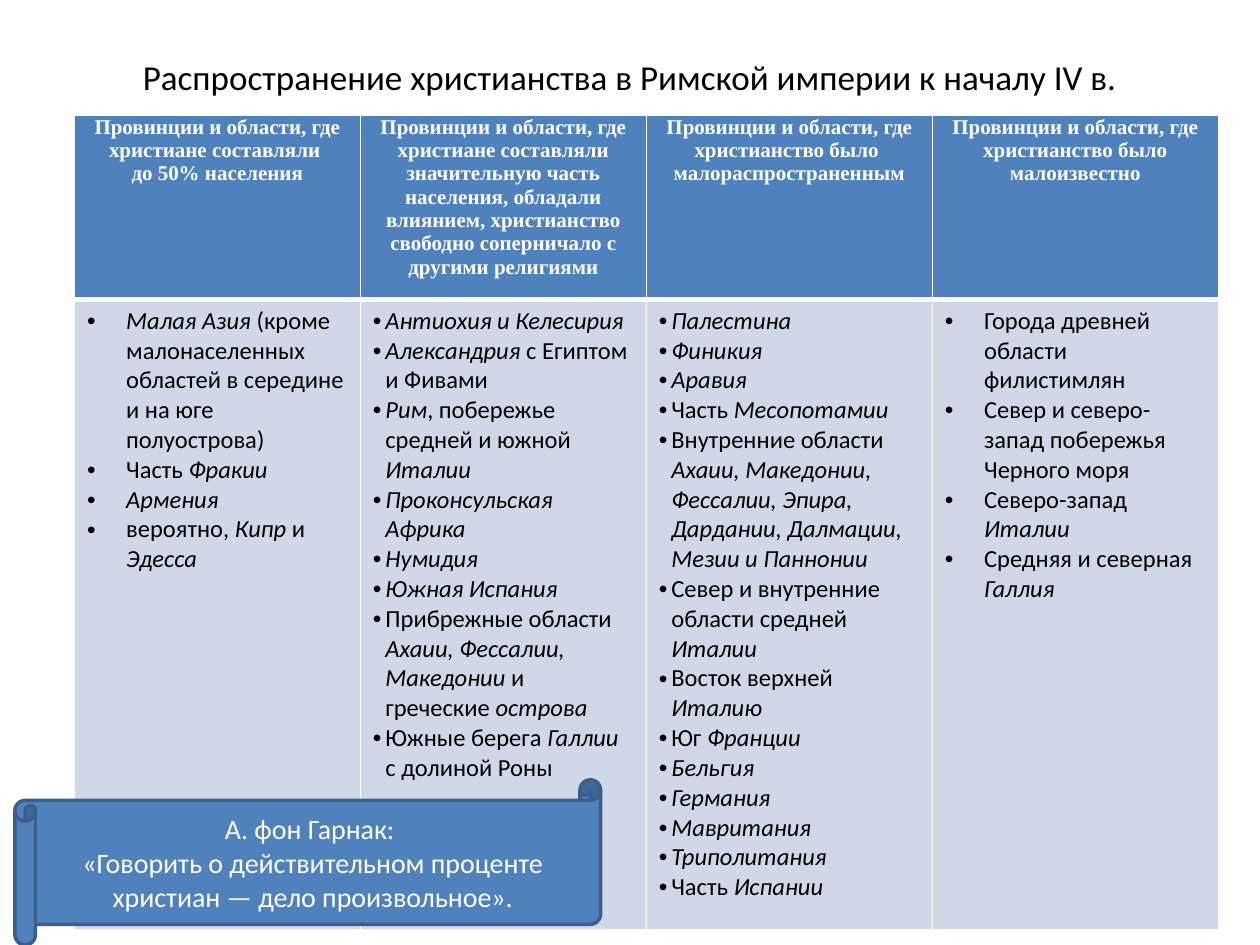
import pptx
import pptx.dml.color
import pptx.enum.shapes
import pptx.enum.text
import pptx.oxml
import pptx.oxml.ns
import pptx.util
from lxml import etree

Cm = pptx.util.Cm
Pt = pptx.util.Pt
RGBColor = pptx.dml.color.RGBColor
CENTER = pptx.enum.text.PP_ALIGN.CENTER
MIDDLE = pptx.enum.text.MSO_ANCHOR.MIDDLE

BLACK = RGBColor(0x00, 0x00, 0x00)
WHITE = RGBColor(0xFF, 0xFF, 0xFF)
BLUE = RGBColor(0x4F, 0x81, 0xBD)
DARK_BLUE = RGBColor(0x3A, 0x5F, 0x8C)
PALE_BLUE = RGBColor(0xD0, 0xD8, 0xE8)

TITLE = "Распространение христианства в Римской империи к началу IV в."
QUOTE = [
    "А. фон Гарнак: ",
    "«Говорить о действительном проценте христиан — дело произвольное».",
]

WIDE_INDENT = Cm(0.79)
NARROW_INDENT = Cm(0.25)

# Each column: heading lines, bullet indent, list items (*...* marks italics).
COLUMNS = [
    (
        ["Провинции и области, где христиане составляли ", "до 50% населения"],
        WIDE_INDENT,
        [
            "*Малая Азия* (кроме малонаселенных областей в середине "
            "и на юге полуострова)",
            "Часть *Фракии*",
            "*Армения*",
            "вероятно, *Кипр* и *Эдесса*",
        ],
    ),
    (
        [
            "Провинции и области, где христиане составляли значительную часть "
            "населения, обладали влиянием, христианство свободно соперничало "
            "с другими религиями"
        ],
        NARROW_INDENT,
        [
            "*Антиохия и Келесирия*",
            "*Александрия* с Египтом и Фивами",
            "*Рим*, побережье средней и южной *Италии*",
            "*Проконсульская Африка*",
            "*Нумидия*",
            "*Южная Испания*",
            "Прибрежные области *Ахаии, Фессалии, Македонии* и греческие *острова*",
            "Южные берега *Галлии* с долиной Роны",
        ],
    ),
    (
        ["Провинции и области, где христианство было ", "малораспространенным"],
        NARROW_INDENT,
        [
            "*Палестина*",
            "*Финикия*",
            "*Аравия*",
            "Часть *Месопотамии*",
            "Внутренние области *Ахаии, Македонии, Фессалии, Эпира, Дардании, "
            "Далмации, Мезии и Паннонии*",
            "Север и внутренние области средней *Италии*",
            "Восток верхней* Италию*",
            "Юг *Франции*",
            "*Бельгия*",
            "*Германия*",
            "*Мавритания*",
            "*Триполитания*",
            "Часть *Испании*",
        ],
    ),
    (
        ["Провинции и области, где христианство было", "малоизвестно"],
        WIDE_INDENT,
        [
            "Города древней области филистимлян",
            "Север и северо-запад побережья Черного моря",
            "Северо-запад* Италии*",
            "Средняя и северная* Галлия*",
        ],
    ),
]


def add_bullet(para, indent):
    properties = para._p.get_or_add_pPr()
    properties.set("marL", str(indent))
    properties.set("indent", str(-indent))
    tag = pptx.oxml.ns.qn
    etree.SubElement(properties, tag("a:buFont"), typeface="Arial")
    etree.SubElement(properties, tag("a:buChar"), char="•")


def add_marked_runs(para, text):
    """Add runs, turning the parts between asterisks into italics."""
    for index, part in enumerate(text.split("*")):
        if part:
            span = para.add_run()
            span.text = part
            span.font.italic = index % 2 == 1


def write_lines(frame, lines, font_name, size, color,
                bold=False, align=None, indent=None):
    frame.word_wrap = True
    for index, line in enumerate(lines):
        para = frame.add_paragraph() if index else frame.paragraphs[0]
        if indent:
            add_bullet(para, indent)
        para.alignment = align
        font = para.font
        font.name, font.size, font.bold = font_name, Pt(size), bold
        font.color.rgb = color
        add_marked_runs(para, line)


def style_cell(cell, color, bottom_width):
    """Fill a cell and draw white borders round it."""
    properties = cell._tc.get_or_add_tcPr()
    for index, side in enumerate("LRTB"):
        width = Pt(bottom_width if side == "B" else 1)
        border = pptx.oxml.parse_xml(
            f'<a:ln{side} {pptx.oxml.ns.nsdecls("a")} w="{width}">'
            f'<a:solidFill><a:srgbClr val="{WHITE}"/></a:solidFill></a:ln{side}>'
        )
        properties.insert(index, border)
    cell.fill.solid()
    cell.fill.fore_color.rgb = color


def add_title(page):
    box = page.shapes.add_textbox(Cm(1.27), Cm(0.76), Cm(22.86), Cm(1.55))
    box.text_frame.vertical_anchor = MIDDLE
    write_lines(box.text_frame, [TITLE], "Calibri", 20, BLACK, align=CENTER)


def add_province_table(page):
    table = page.shapes.add_table(
        2, len(COLUMNS), Cm(1.5), Cm(2.33), Cm(23.06), Cm(16.41)
    ).table
    table.rows[0].height = Cm(3.71)
    table.rows[1].height = Cm(12.7)
    for index, (heading, indent, items) in enumerate(COLUMNS):
        head, body = table.cell(0, index), table.cell(1, index)
        head.margin_left = head.margin_right = Cm(0.18)
        head.margin_top = head.margin_bottom = 0
        style_cell(head, BLUE, 3)
        write_lines(head.text_frame, heading, "Times New Roman", 12, WHITE,
                    bold=True, align=CENTER)
        style_cell(body, PALE_BLUE, 1)
        write_lines(body.text_frame, items, "Calibri", 14, BLACK, indent=indent)


def add_quote_scroll(page):
    scroll = page.shapes.add_shape(
        pptx.enum.shapes.MSO_SHAPE.HORIZONTAL_SCROLL,
        Cm(0.3), Cm(15.72), Cm(11.81), Cm(3.33),
    )
    scroll.shadow.inherit = False
    scroll.fill.solid()
    scroll.fill.fore_color.rgb = BLUE
    scroll.line.color.rgb = DARK_BLUE
    scroll.line.width = Pt(2)
    scroll.text_frame.vertical_anchor = MIDDLE
    write_lines(scroll.text_frame, QUOTE, "Calibri", 16, WHITE, align=CENTER)


def main():
    deck = pptx.Presentation()
    deck.slide_width, deck.slide_height = Cm(25.4), Cm(19.05)
    page = deck.slides.add_slide(deck.slide_layouts[6])
    add_title(page)
    add_province_table(page)
    add_quote_scroll(page)
    deck.save("out.pptx")


if __name__ == "__main__":
    main()
